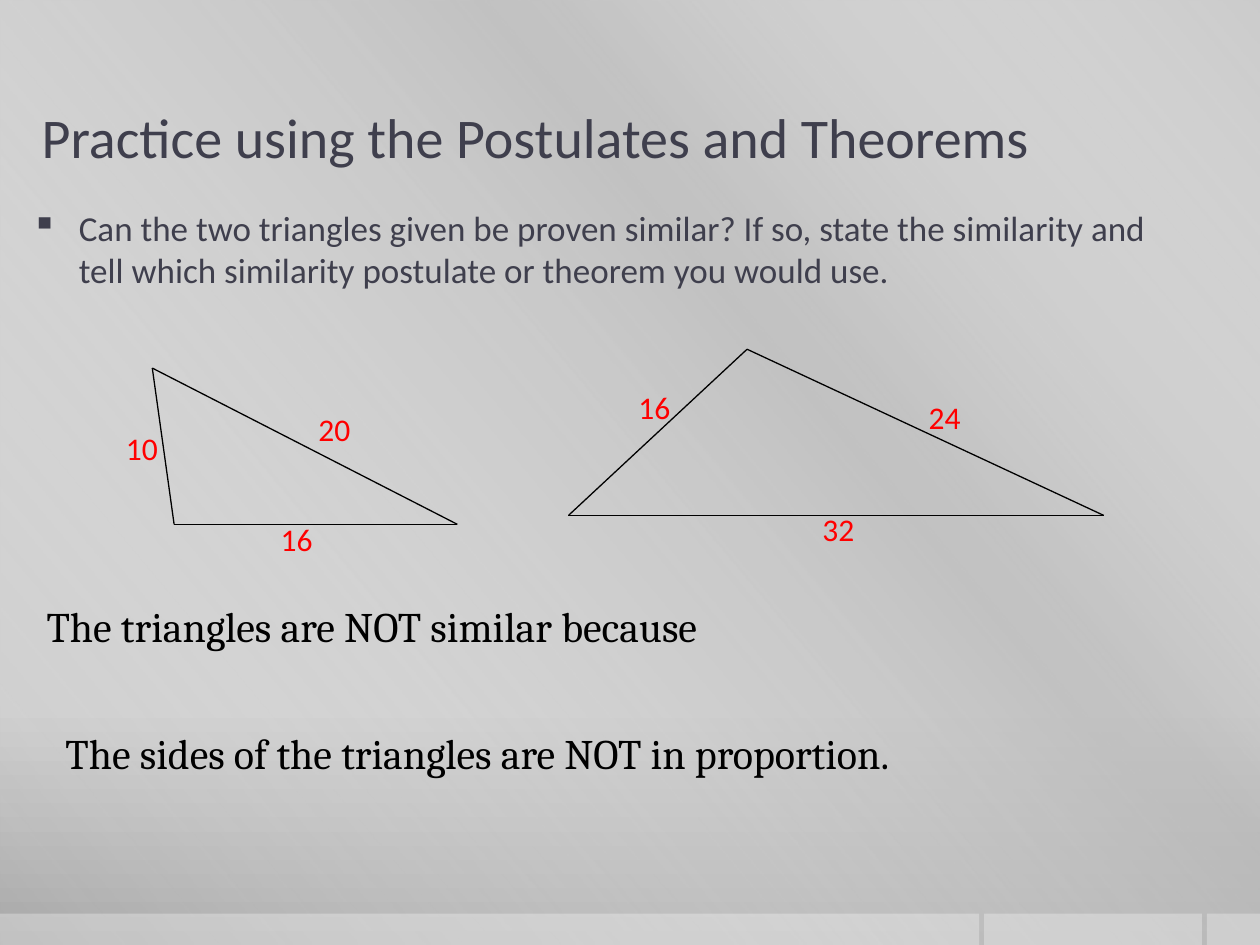
from itertools import combinations

from lxml.etree import SubElement
from pptx import Presentation
from pptx.dml.color import RGBColor
from pptx.enum.shapes import MSO_CONNECTOR, MSO_SHAPE
from pptx.enum.text import MSO_ANCHOR, PP_ALIGN
from pptx.oxml.ns import qn
from pptx.util import Cm, Pt

BLACK = RGBColor(0x00, 0x00, 0x00)
WHITE = RGBColor(0xFF, 0xFF, 0xFF)
RED = RGBColor(0xFF, 0x00, 0x00)
SLATE = RGBColor(0x3F, 0x3F, 0x4D)
GRAY = RGBColor(0xBF, 0xBF, 0xBF)
LIGHT = RGBColor(0xCB, 0xCB, 0xCB)
MIDDLE = RGBColor(0xC8, 0xC8, 0xC8)
DARK = RGBColor(0xA7, 0xA7, 0xA7)

BACKDROP = [(0, LIGHT, 100), (76, MIDDLE, 100), (100, DARK, 100)]
VEIL = [(0, WHITE, 0), (34, GRAY, 61), (38, GRAY, 76), (100, WHITE, 0)]
FOOTER_BARS = [(0, 19.74), (19.84, 4.39), (24.33, 1.07)]

SMALL_TRIANGLE = [(3.07, 7.42), (3.51, 10.57), (9.22, 10.57)]
SMALL_LABELS = [("10", 2.29, 8.53), ("20", 6.17, 8.15), ("16", 5.41, 10.36)]
LARGE_TRIANGLE = [(11.46, 10.39), (22.25, 10.39), (15.06, 7.04)]
LARGE_LABELS = [("16", 12.62, 7.7), ("24", 18.47, 7.9), ("32", 16.33, 10.16)]


def set_alpha(color, percent):
    SubElement(color, qn("a:alpha"), val=str(percent * 1000))


def set_gradient(fill, element, stops, angle):
    fill.gradient()
    grad = element.find(".//" + qn("a:gradFill"))
    grad.find(qn("a:lin")).set("ang", str(angle * 60000))
    gs_lst = grad.find(qn("a:gsLst"))
    for gs in list(gs_lst):
        gs_lst.remove(gs)
    for pos, color, alpha in stops:
        gs = SubElement(gs_lst, qn("a:gs"), pos=str(pos * 1000))
        set_alpha(SubElement(gs, qn("a:srgbClr"), val=str(color)), alpha)


def add_rect(s, left, top, width, height):
    sp = s.shapes.add_shape(MSO_SHAPE.RECTANGLE, Cm(left), Cm(top), Cm(width), Cm(height))
    sp.shadow.inherit = False
    sp.line.fill.background()
    return sp


def add_footer_bar(s, left, width):
    sp = add_rect(s, left, 18.42, width, 0.63)
    sp.fill.solid()
    sp.fill.fore_color.rgb = WHITE
    set_alpha(sp.element.spPr.find(".//" + qn("a:srgbClr")), 30)


def format_text(p, font, size, color):
    p.alignment = PP_ALIGN.LEFT
    for r in p.runs:
        r.font.name = font
        r.font.size = Pt(size)
        r.font.color.rgb = color


def add_text(s, text, left, top, width, height, font, size, color):
    tf = s.shapes.add_textbox(Cm(left), Cm(top), Cm(width), Cm(height)).text_frame
    tf.word_wrap = True
    tf.text = text
    format_text(tf.paragraphs[0], font, size, color)
    return tf


def format_title(s, text):
    title = s.shapes.title
    title.left, title.top, title.width, title.height = Cm(0.84), Cm(1.47), Cm(23.29), Cm(2.54)
    tf = title.text_frame
    tf.text = text
    tf.word_wrap = True
    tf.vertical_anchor = MSO_ANCHOR.MIDDLE
    tf.margin_left = tf.margin_right = 0
    format_text(tf.paragraphs[0], "Calibri", 32, SLATE)
    s.shapes.element.append(title.element)


def add_question(s, text):
    tf = add_text(s, text, 0.64, 4.04, 23.29, 2.2, "Calibri", 20, SLATE)
    tf.margin_left = tf.margin_right = 0
    pPr = tf.paragraphs[0]._p.get_or_add_pPr()
    pPr.set("marL", str(Cm(0.95)))
    pPr.set("indent", str(-Cm(0.95)))
    SubElement(pPr, qn("a:buChar"), char="▪")


def add_side(s, start, end):
    line = s.shapes.add_connector(MSO_CONNECTOR.STRAIGHT, *map(Cm, start + end))
    line.line.color.rgb = BLACK
    line.line.width = Pt(0.75)
    SubElement(line.element.spPr, qn("a:effectLst"))


def add_triangle(s, corners, labels):
    for start, end in combinations(corners, 2):
        add_side(s, start, end)
    for text, left, top in labels:
        add_text(s, text, left, top, 1.27, 1.02, "Calibri", 18, RED)


def add_answer(s, text, left, top):
    add_text(s, text, left, top, 20.35, 1.27, "Cambria", 24, BLACK)


def main():
    prs = Presentation()
    prs.slide_width, prs.slide_height = Cm(25.4), Cm(19.05)
    s = prs.slides.add_slide(prs.slide_layouts[5])
    set_gradient(s.background.fill, s.element, BACKDROP, 90)
    veil = add_rect(s, 0, 0, 25.4, 19.05)
    set_gradient(veil.fill, veil.element, VEIL, 140)
    for left, width in FOOTER_BARS:
        add_footer_bar(s, left, width)
    format_title(s, "Practice using the Postulates and Theorems")
    add_question(s, "Can the two triangles given be proven similar? If so, state the similarity "
                    "and tell which similarity postulate or theorem you would use.")
    add_triangle(s, SMALL_TRIANGLE, SMALL_LABELS)
    add_triangle(s, LARGE_TRIANGLE, LARGE_LABELS)
    add_answer(s, "The triangles are NOT similar because", 0.69, 11.99)
    add_answer(s, "The sides of the triangles are NOT in proportion.", 1.07, 14.55)
    prs.save("out.pptx")


if __name__ == "__main__":
    main()
